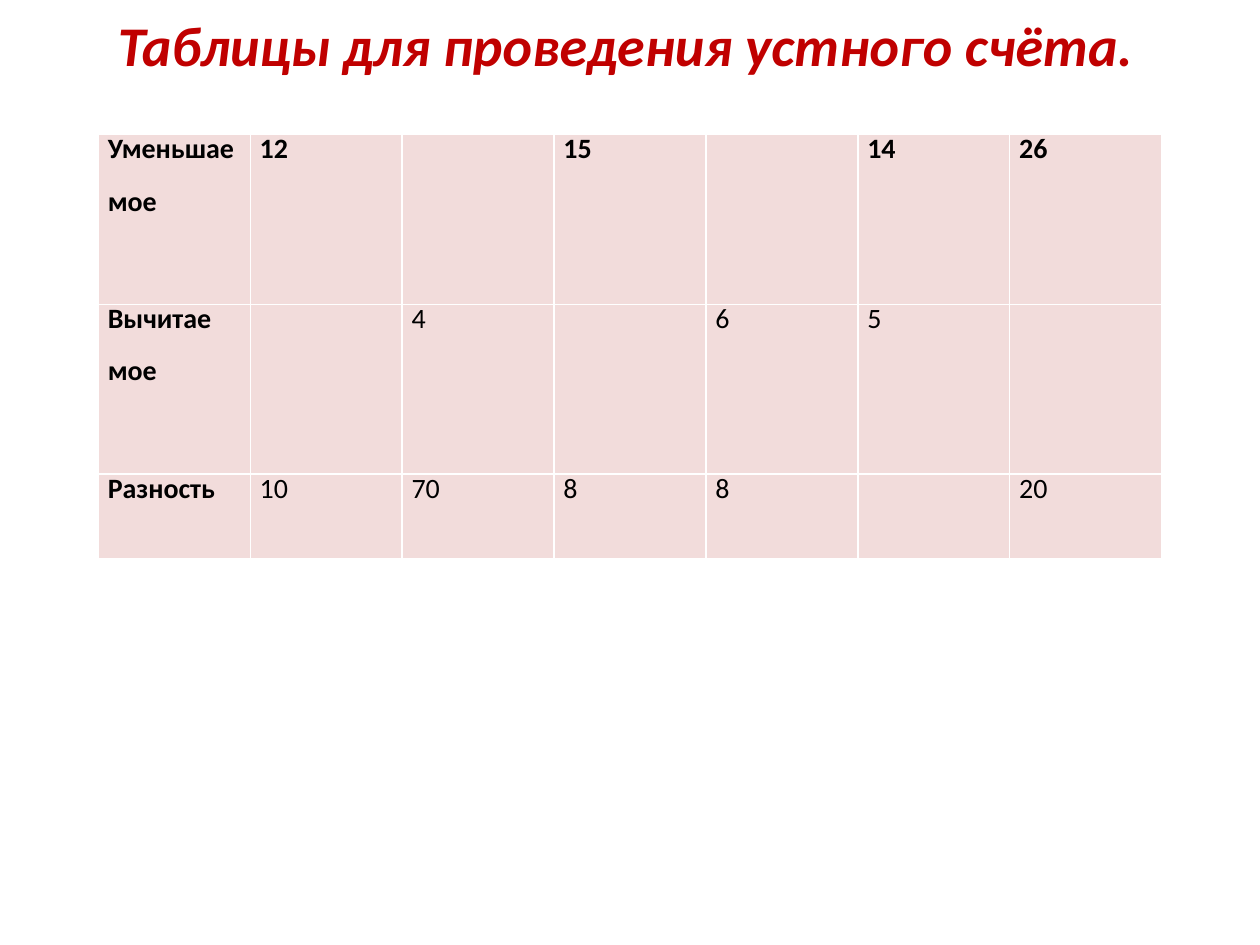
import pptx
import pptx.dml.color
import pptx.enum.text
import pptx.util

Pt = pptx.util.Pt
ALIGN = pptx.enum.text.PP_ALIGN
ANCHOR = pptx.enum.text.MSO_ANCHOR

RED = pptx.dml.color.RGBColor(0xC0, 0x00, 0x00)
BLACK = pptx.dml.color.RGBColor(0x00, 0x00, 0x00)
PINK = pptx.dml.color.RGBColor(0xF2, 0xDC, 0xDB)

TITLE = "Таблицы для проведения устного счёта."
ROWS = [
    ["Уменьшае\nмое", "12", "", "15", "", "14", "26"],
    ["Вычитае\nмое", "", "4", "", "6", "5", ""],
    ["Разность", "10", "70", "8", "8", "", "20"],
]
ROW_HEIGHTS = [97, 97, 48.5]
COLUMN_WIDTH = 86.8


def set_values(target, values):
    for name, value in values.items():
        setattr(target, name, value)


def style_font(font, size, color, **values):
    set_values(font, {"name": "Calibri", "size": Pt(size), **values})
    font.color.rgb = color


def add_title(page):
    box = page.shapes.add_textbox(Pt(33.8), Pt(5.5), Pt(648), Pt(39))
    frame = box.text_frame
    set_values(frame, {
        "word_wrap": True, "vertical_anchor": ANCHOR.MIDDLE,
        "margin_top": 0, "margin_bottom": 0,
    })
    para = frame.paragraphs[0]
    para.alignment = ALIGN.CENTER
    span = para.add_run()
    span.text = TITLE
    style_font(span.font, 32, RED, bold=True, italic=True)


def fill_cell(cell, text, bold):
    cell.fill.solid()
    cell.fill.fore_color.rgb = PINK
    set_values(cell, {
        "margin_left": Pt(5.4), "margin_right": Pt(5.4),
        "margin_top": 0, "margin_bottom": 0,
    })
    cell.text_frame.text = text
    for index, para in enumerate(cell.text_frame.paragraphs):
        set_values(para, {
            "alignment": ALIGN.JUSTIFY, "line_spacing": Pt(18),
            "space_before": Pt(6 if index else 0), "space_after": Pt(6),
        })
        for span in para.runs:
            style_font(span.font, 16, BLACK, bold=bold)


def add_subtraction_table(page):
    column_count = len(ROWS[0])
    table = page.shapes.add_table(
        len(ROWS), column_count, Pt(56.2), Pt(77),
        Pt(COLUMN_WIDTH * column_count), Pt(sum(ROW_HEIGHTS))).table
    for column in table.columns:
        column.width = Pt(COLUMN_WIDTH)
    for r, (height, texts) in enumerate(zip(ROW_HEIGHTS, ROWS)):
        table.rows[r].height = Pt(height)
        for c, text in enumerate(texts):
            fill_cell(table.cell(r, c), text, bold=r == 0 or c == 0)


def main():
    deck = pptx.Presentation()
    set_values(deck, {"slide_width": Pt(720), "slide_height": Pt(540)})
    page = deck.slides.add_slide(deck.slide_layouts[6])
    add_title(page)
    add_subtraction_table(page)
    deck.save("out.pptx")


if __name__ == "__main__":
    main()
